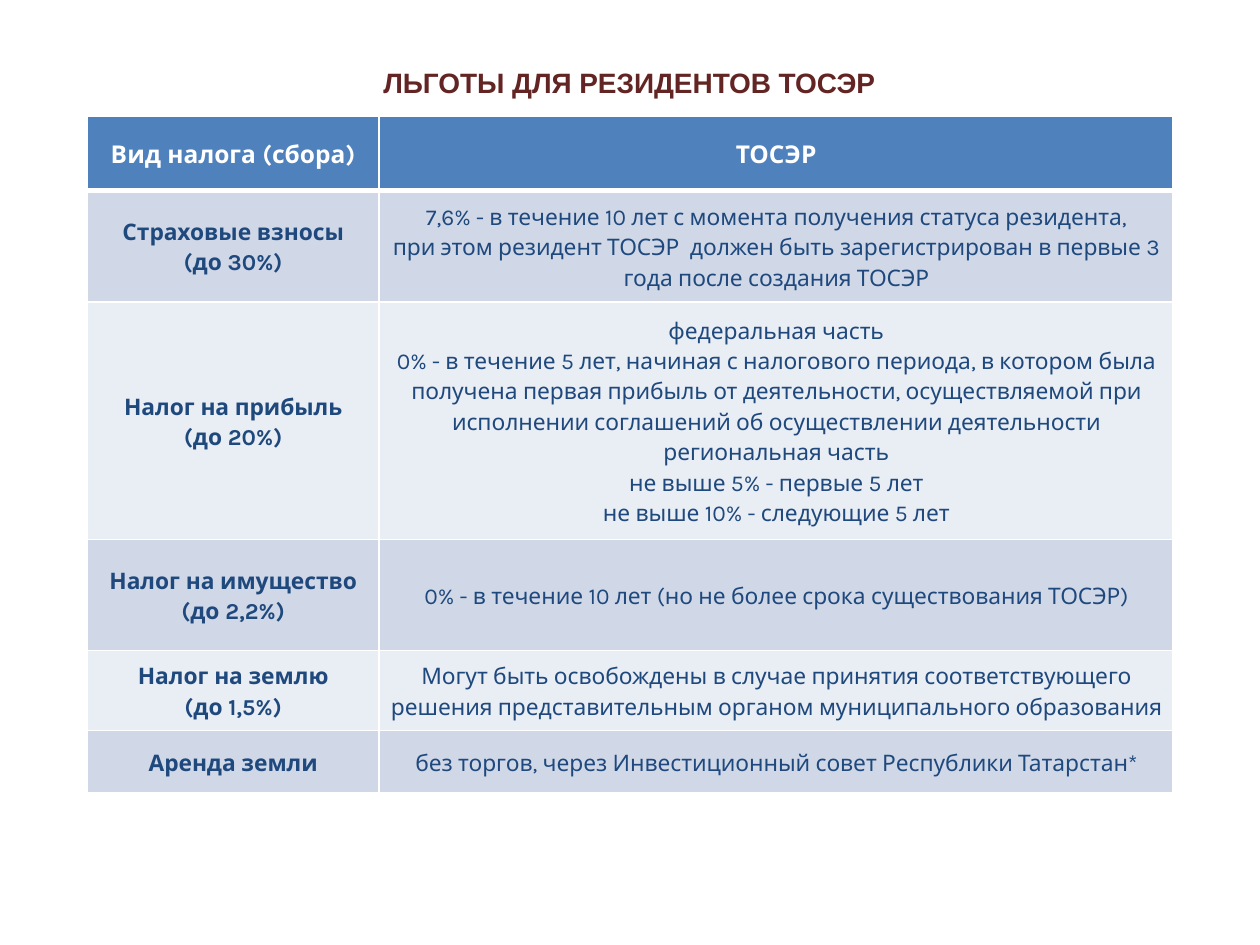
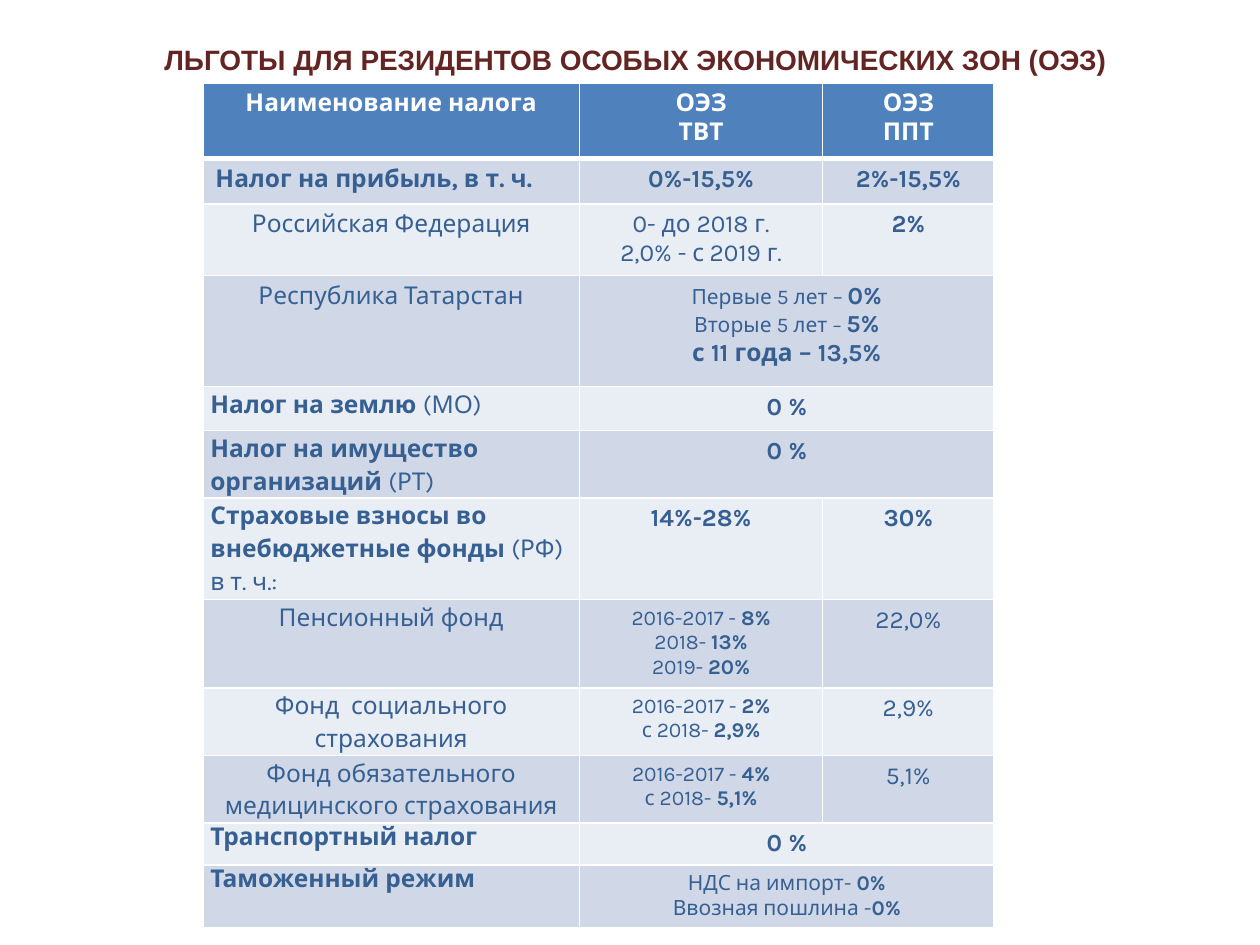
from dataclasses import dataclass
from typing import NamedTuple

from lxml import etree
from pptx import Presentation
from pptx import util as u
from pptx.dml.color import RGBColor
from pptx.enum import text as t
from pptx.oxml import ns

PX = 9144  # 100 px to the inch
WHITE, HEADER_BLUE, TITLE_RED = "FFFFFF", "4F81BD", "632523"
BANDS = ("D0D8E8", "E9EDF4")
NAVY, STEEL = "1F497D", "376092"
LEFT, CENTER = t.PP_ALIGN.LEFT, t.PP_ALIGN.CENTER
TOP, MIDDLE = t.MSO_ANCHOR.TOP, t.MSO_ANCHOR.MIDDLE


def px(length):
    return u.Emu(length * PX)


def rgb(hex_color):
    return RGBColor.from_string(hex_color)


class Run(NamedTuple):
    text: str
    size: int
    bold: bool


@dataclass
class Cell:
    """Lines are lists of Runs, or strings where each "|" switches bold on or off."""
    lines: tuple
    size: int = 14
    align: int = CENTER
    anchor: int = TOP
    inset: tuple = (10, 5)
    spacing: float = None

    def runs(self, line):
        if not isinstance(line, str):
            return line
        return [Run(part, self.size, i % 2 == 1)
                for i, part in enumerate(line.split("|")) if part]


class Deck:
    title_font, table_font = "Arial", "Karla"

    def __init__(self, width, height):
        self.prs = Presentation()
        self.prs.slide_width, self.prs.slide_height = px(width), px(height)
        self.slide = None

    def new_slide(self):
        self.slide = self.prs.slides.add_slide(self.prs.slide_layouts[6])

    def add_runs(self, paragraph, runs, font_name, color):
        for part in runs:
            run = paragraph.add_run()
            run.text = part.text
            font = run.font
            font.name, font.size, font.bold = font_name, u.Pt(part.size), part.bold
            font.color.rgb = rgb(color)

    def title(self, words, left, top, width, height):
        frame = self.slide.shapes.add_textbox(px(left), px(top), px(width), px(height)).text_frame
        frame.word_wrap = True
        frame.auto_size = t.MSO_AUTO_SIZE.SHAPE_TO_FIT_TEXT
        heading = frame.paragraphs[0]
        heading.alignment = CENTER
        self.add_runs(heading, [Run(words, 16, True)], self.title_font, TITLE_RED)

    def borders(self, cell, top_width, bottom_width):
        properties = cell._tc.get_or_add_tcPr()
        sides = {"lnL": 1, "lnR": 1, "lnT": top_width, "lnB": bottom_width}
        for i, (side, width) in enumerate(sides.items()):
            line = etree.Element(ns.qn("a:" + side), w=str(int(u.Pt(width))))
            fill = etree.SubElement(line, ns.qn("a:solidFill"))
            etree.SubElement(fill, ns.qn("a:srgbClr"), val=WHITE)
            properties.insert(i, line)

    def fill_cell(self, cell, content, color):
        cell.vertical_anchor = content.anchor
        across, down = content.inset
        cell.margin_left = cell.margin_right = px(across)
        cell.margin_top = cell.margin_bottom = px(down)
        frame = cell.text_frame
        for i, line in enumerate(content.lines):
            paragraph = frame.add_paragraph() if i else frame.paragraphs[0]
            paragraph.alignment = content.align
            if content.spacing:
                paragraph.line_spacing = content.spacing
            self.add_runs(paragraph, content.runs(line), self.table_font, color)

    def table(self, left, top, widths, heights, rows, body_color):
        """Draw rows of Cells; None joins its place to the cell on its left."""
        table = self.slide.shapes.add_table(
            len(rows), len(widths), px(left), px(top), px(sum(widths)), px(sum(heights))).table
        for column, width in zip(table.columns, widths):
            column.width = px(width)
        for r, (contents, height) in enumerate(zip(rows, heights)):
            table.rows[r].height = px(height)
            for c, content in enumerate(contents):
                cell = table.cell(r, c)
                cell.fill.solid()
                cell.fill.fore_color.rgb = rgb(BANDS[(r - 1) % 2] if r else HEADER_BLUE)
                self.borders(cell, 3 if r == 1 else 1, 1 if r else 3)
                if content is None:
                    table.cell(r, c - 1).merge(cell)
                else:
                    self.fill_cell(cell, content, body_color if r else WHITE)


def benefit(*lines, size=13, inset=7):
    return Cell(lines, size, anchor=MIDDLE, inset=(inset, inset), spacing=1.15)


def rate(*lines, size=14):
    return Cell(lines, size)


def tax(line, align=LEFT, spacing=1.15):
    return Cell((line,), align=align, inset=(6, 0), spacing=spacing)


def fund(line):
    return tax(line, CENTER)


def tosed_slide(deck):
    deck.new_slide()
    deck.title("ЛЬГОТЫ ДЛЯ РЕЗИДЕНТОВ ТОСЭР", 287, 47, 425, 37)
    rows = [
        (benefit("|Вид налога (сбора)", size=14), benefit("|ТОСЭР", size=14)),
        (benefit("|Страховые взносы", "|(до 30%)"),
         benefit("7,6% - в течение 10 лет с момента получения статуса резидента,",
                 "при этом резидент ТОСЭР  должен быть зарегистрирован в первые 3 года "
                 "после создания ТОСЭР")),
        (benefit("|Налог на прибыль", "|(до 20%)"),
         benefit("федеральная часть",
                 "0% - в течение 5 лет, начиная с налогового периода, в котором была "
                 "получена первая прибыль от деятельности, осуществляемой при исполнении "
                 "соглашений об осуществлении деятельности",
                 "региональная часть",
                 "не выше 5% - первые 5 лет",
                 "не выше 10% - следующие 5 лет")),
        (benefit("|Налог на имущество", "|(до 2,2%)"),
         benefit("0% - в течение 10 лет (но не более срока существования ТОСЭР)")),
        (benefit("|Налог на землю", "|(до 1,5%)"),
         benefit("Могут быть освобождены в случае принятия соответствующего решения "
                 "представительным органом муниципального образования", inset=1)),
        (benefit("|Аренда земли"),
         benefit("без торгов, через Инвестиционный совет Республики Татарстан*", inset=1)),
    ]
    deck.table(69, 92, (232, 630), (59, 82, 173, 88, 59, 49), rows, NAVY)


def economic_zones_slide(deck):
    deck.new_slide()
    deck.title("ЛЬГОТЫ ДЛЯ РЕЗИДЕНТОВ ОСОБЫХ ЭКОНОМИЧЕСКИХ ЗОН (ОЭЗ)", 20, 29, 969, 37)
    zero = rate("|0 %")
    rows = [
        (rate("|Наименование налога"), rate("|ОЭЗ", "|ТВТ"), rate("|ОЭЗ", "|ППТ")),
        (Cell(("|Налог на прибыль, в т. ч.",), align=LEFT),
         rate("|0%-15,5%"), rate("|2%-15,5%")),
        (rate("Российская Федерация"),
         rate("0- до 2018 г.", "2,0% - с 2019 г."), rate("|2%")),
        (rate("Республика Татарстан"),
         rate([Run("Первые 5 лет –", 12, False), Run(" ", 11, True), Run("0%", 14, True)],
              [Run("Вторые 5 лет ", 12, False), Run("– ", 11, False), Run("5%", 14, True)],
              "|с 11 года – 13,5%"), None),
        (tax("|Налог на землю |(МО)"), zero, None),
        (tax("|Налог на имущество организаций |(РТ)"), zero, None),
        (tax("|Страховые взносы во внебюджетные фонды |(РФ) в т. ч.:"),
         rate("|14%-28%"), rate("|30%")),
        (fund("Пенсионный фонд"),
         rate("2016-2017 - |8%", "2018- |13%", "2019- |20%", size=12), rate("22,0%")),
        (fund("Фонд  социального страхования"),
         rate("2016-2017 - |2%", "с 2018- |2,9%", size=12), rate("2,9%")),
        (fund("Фонд обязательного медицинского страхования"),
         rate("2016-2017 - |4%", "с 2018- |5,1%", size=12), rate("5,1%")),
        (tax("|Транспортный налог", spacing=None), zero, None),
        (tax("|Таможенный режим", spacing=None),
         rate("НДС на импорт- |0%", "Ввозная пошлина -|0%", size=12), None),
    ]
    heights = (60, 36, 52, 88, 35, 50, 74, 65, 46, 53, 31, 46)
    deck.table(161, 66, (299, 193, 136), heights, rows, STEEL)


def main():
    deck = Deck(1000, 750)
    tosed_slide(deck)
    economic_zones_slide(deck)
    deck.prs.save("out.pptx")


if __name__ == "__main__":
    main()
